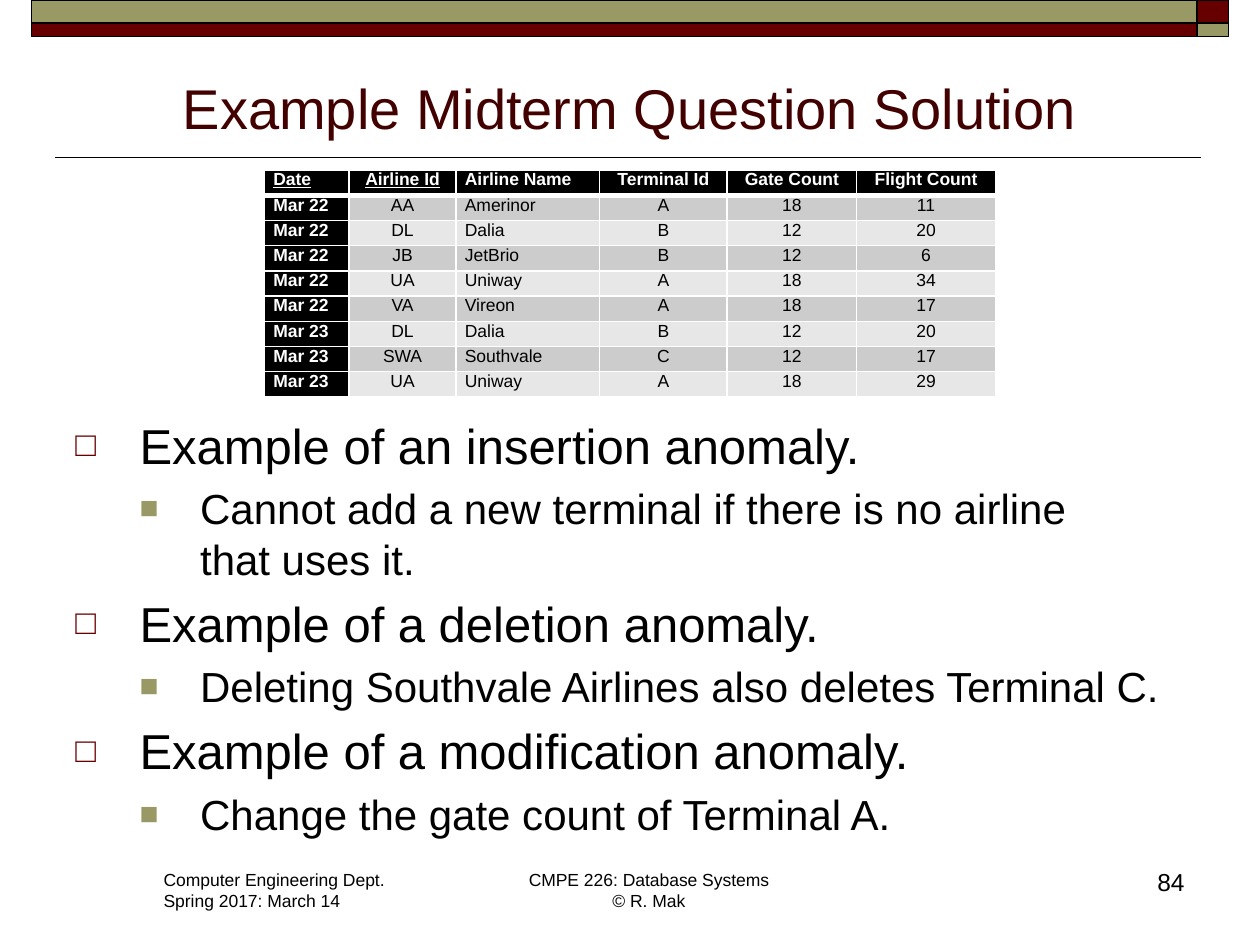
import pptx
import pptx.dml.color
import pptx.enum.shapes
import pptx.enum.text
import pptx.oxml
import pptx.oxml.ns
import pptx.util

WIDTH, HEIGHT = 10, 7.5
FONT = "Arial"
BLACK, WHITE, MAROON, OLIVE = "000000", "FFFFFF", "660000", "999966"
BANDS = ("CCCCCC", "E7E7E7")
LEFT = pptx.enum.text.PP_ALIGN.LEFT
CENTER = pptx.enum.text.PP_ALIGN.CENTER
RIGHT = pptx.enum.text.PP_ALIGN.RIGHT

TITLE = "Example Midterm Question Solution"
HEADINGS = ("Date", "Airline Id", "Airline Name", "Terminal Id", "Gate Count", "Flight Count")
FLIGHTS = [
    ("Mar 22", "AA", "Amerinor", "A", "18", "11"),
    ("Mar 22", "DL", "Dalia", "B", "12", "20"),
    ("Mar 22", "JB", "JetBrio", "B", "12", "6"),
    ("Mar 22", "UA", "Uniway", "A", "18", "34"),
    ("Mar 22", "VA", "Vireon", "A", "18", "17"),
    ("Mar 23", "DL", "Dalia", "B", "12", "20"),
    ("Mar 23", "SWA", "Southvale", "C", "12", "17"),
    ("Mar 23", "UA", "Uniway", "A", "18", "29"),
]
COLUMN_WIDTHS = (0.67, 0.85, 1.14, 1.01, 1.03, 1.1)
COLUMN_ALIGNS = (LEFT, CENTER, LEFT, CENTER, CENTER, CENTER)
KEY_COLUMNS = 2
ROW_HEIGHT = 0.2
ANOMALIES = [
    ("Example of an insertion anomaly.",
     "Cannot add a new terminal if there is no airline \vthat uses it."),
    ("Example of a deletion anomaly.",
     "Deleting Southvale Airlines also deletes Terminal C."),
    ("Example of a modification anomaly.",
     "Change the gate count of Terminal A."),
]
LEVELS = [
    dict(size=28, indent=(0.51, -0.51), bullet=("□", MAROON, 70)),
    dict(size=24, indent=(0.99, -0.48), bullet=("■", OLIVE, 75)),
]
DEPARTMENT = ("Computer Engineering Dept.", "Spring 2017: March 14")
COURSE = "CMPE 226: Database Systems\v© R. Mak"
PAGE = "84"


def inches(*lengths):
    return [pptx.util.Inches(length) for length in lengths]


def rgb(color):
    return pptx.dml.color.RGBColor.from_string(color)


def element(xml):
    namespace = pptx.oxml.ns.nsdecls("a")
    return pptx.oxml.parse_xml(xml.replace("/>", f" {namespace}/>", 1)
                               if xml.endswith("/>") and xml.count("<") == 1
                               else xml.replace(">", f" {namespace}>", 1))


def write(paragraph, text, size=10, color=BLACK, align=LEFT, bold=False,
          underline=False, before=0, level=0, indent=None, bullet=None):
    paragraph.text = text
    paragraph.alignment = align
    paragraph.level = level
    paragraph.space_before = pptx.util.Pt(before)
    properties = paragraph._p.get_or_add_pPr()
    if indent:
        for key, length in zip(("marL", "indent"), inches(*indent)):
            properties.set(key, str(length))
    if bullet:
        mark, mark_color, share = bullet
        for xml in (f'<a:buClr><a:srgbClr val="{mark_color}"/></a:buClr>',
                    f'<a:buSzPct val="{share * 1000}"/>',
                    f'<a:buFont typeface="{FONT}"/>',
                    f'<a:buChar char="{mark}"/>'):
            properties.append(element(xml))
    for run in paragraph.runs:
        run.font.name = FONT
        run.font.size = pptx.util.Pt(size)
        run.font.color.rgb = rgb(color)
        run.font.bold = bold
        run.font.underline = underline


def add_text(slide, box, paragraphs, wrap=True):
    frame = slide.shapes.add_textbox(*inches(*box)).text_frame
    frame.word_wrap = wrap
    for number, (text, style) in enumerate(paragraphs):
        paragraph = frame.add_paragraph() if number else frame.paragraphs[0]
        write(paragraph, text, **style)


def add_banner(slide):
    left, corner, right = 0.25, WIDTH - 0.5, WIDTH - 0.25
    upper, lower = 0.18, 0.11
    for top, height, colors in ((0, upper, (OLIVE, MAROON)), (upper, lower, (MAROON, OLIVE))):
        for start, end, color in zip((left, corner), (corner, right), colors):
            bar = slide.shapes.add_shape(pptx.enum.shapes.MSO_SHAPE.RECTANGLE,
                                         *inches(start, top, end - start, height))
            bar.shadow.inherit = False
            bar.fill.solid()
            bar.fill.fore_color.rgb = rgb(color)
            bar.line.color.rgb = rgb(BLACK)
            bar.line.width = pptx.util.Pt(1)
    rule = slide.shapes.add_connector(pptx.enum.shapes.MSO_CONNECTOR.STRAIGHT,
                                      *inches(9.53, 1.25, 0.44, 1.25))
    rule.line.color.rgb = rgb(BLACK)
    rule.line.width = pptx.util.Pt(1)
    rule._element.spPr.append(element("<a:effectLst/>"))


def add_title(slide):
    title = slide.shapes.title
    title.left, title.top, title.width, title.height = inches(0.5, 0.45, 9, 0.72)
    title.text_frame.vertical_anchor = pptx.enum.text.MSO_ANCHOR.BOTTOM
    write(title.text_frame.paragraphs[0], TITLE, size=32, color="420000", align=CENTER)


def add_borders(cell, row):
    edges = {"L": 1, "R": 1, "T": 3 if row == 1 else 1, "B": 3 if row == 0 else 1}
    for side, points in edges.items():
        cell._tc.get_or_add_tcPr().append(element(
            f'<a:ln{side} w="{pptx.util.Pt(points)}"><a:solidFill>'
            f'<a:srgbClr val="{WHITE}"/></a:solidFill></a:ln{side}>'))


def add_flights(slide):
    rows = [HEADINGS, *FLIGHTS]
    total = sum(COLUMN_WIDTHS)
    table = slide.shapes.add_table(len(rows), len(HEADINGS), *inches(
        (WIDTH - total) / 2, 1.35, total, ROW_HEIGHT * len(rows))).table
    for column, width in zip(table.columns, inches(*COLUMN_WIDTHS)):
        column.width = width
    for r, values in enumerate(rows):
        table.rows[r].height = pptx.util.Inches(ROW_HEIGHT)
        for c, value in enumerate(values):
            cell = table.cell(r, c)
            heading = r == 0 or c == 0
            cell.margin_left, cell.margin_top, cell.margin_right, cell.margin_bottom = inches(
                0.07, 0, 0.07, 0)
            add_borders(cell, r)
            cell.fill.solid()
            cell.fill.fore_color.rgb = rgb(BLACK if heading else BANDS[(r - 1) % 2])
            write(cell.text_frame.paragraphs[0], value, align=COLUMN_ALIGNS[c], bold=heading,
                  color=WHITE if heading else BLACK, underline=r == 0 and c < KEY_COLUMNS)


def add_anomalies(slide):
    points = [(text, dict(LEVELS[level], level=level, before=0.2 * LEVELS[level]["size"]))
              for anomaly in ANOMALIES for level, text in enumerate(anomaly)]
    points[0][1]["before"] = 0
    add_text(slide, (0.5, 3.25, 9, 3.6), points)


def main():
    deck = pptx.Presentation()
    deck.slide_width, deck.slide_height = inches(WIDTH, HEIGHT)
    slide = deck.slides.add_slide(deck.slide_layouts.get_by_name("Title Only"))
    add_banner(slide)
    add_title(slide)
    add_flights(slide)
    add_anomalies(slide)
    add_text(slide, (1.2, 6.85, 1.98, 0.44), [(line, {}) for line in DEPARTMENT], wrap=False)
    add_text(slide, (4.08, 6.85, 2.14, 0.44), [(COURSE, dict(align=CENTER))], wrap=False)
    add_text(slide, (7.42, 6.83, 2.08, 0.5), [(PAGE, dict(size=14, align=RIGHT))])
    deck.save("out.pptx")


if __name__ == "__main__":
    main()
